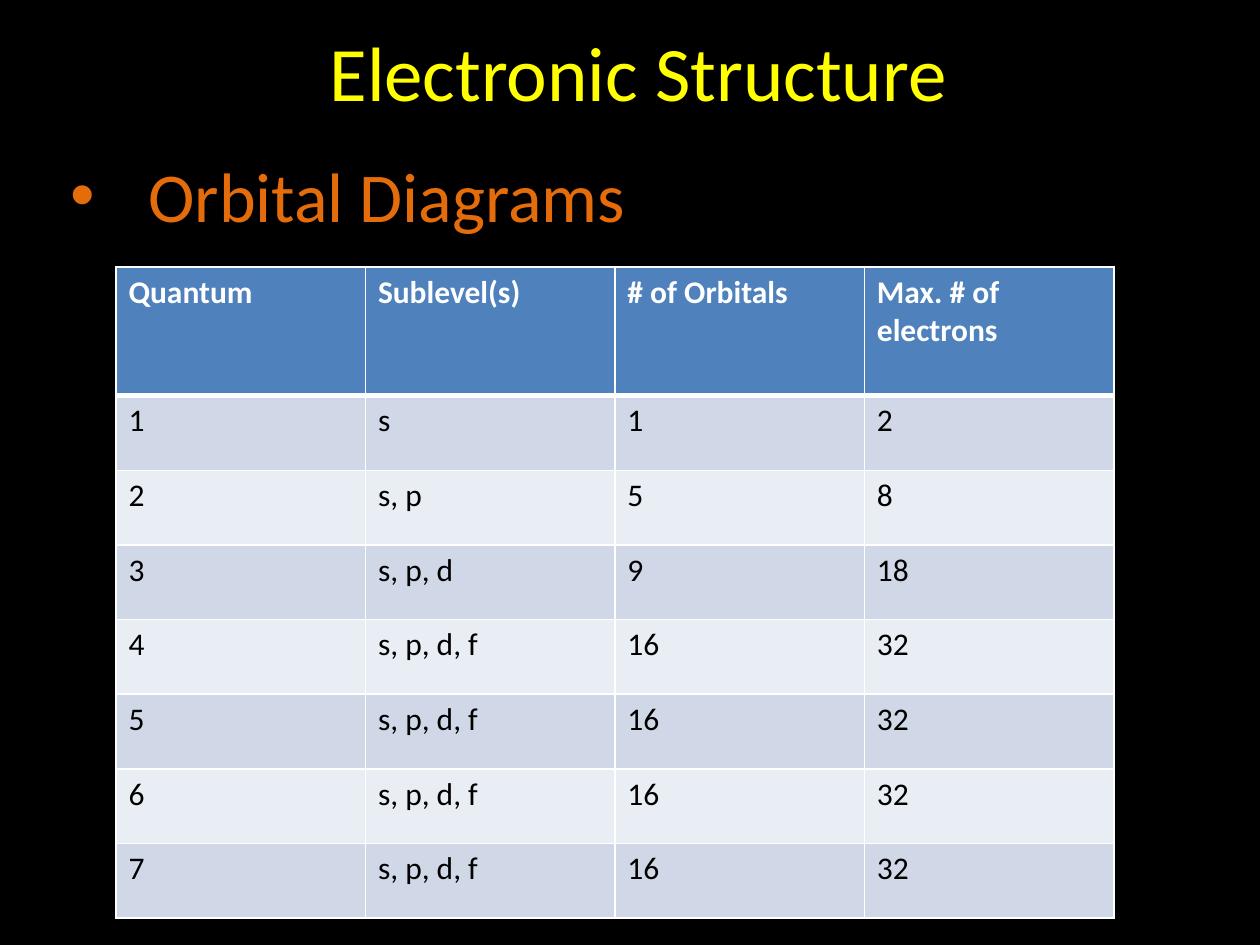
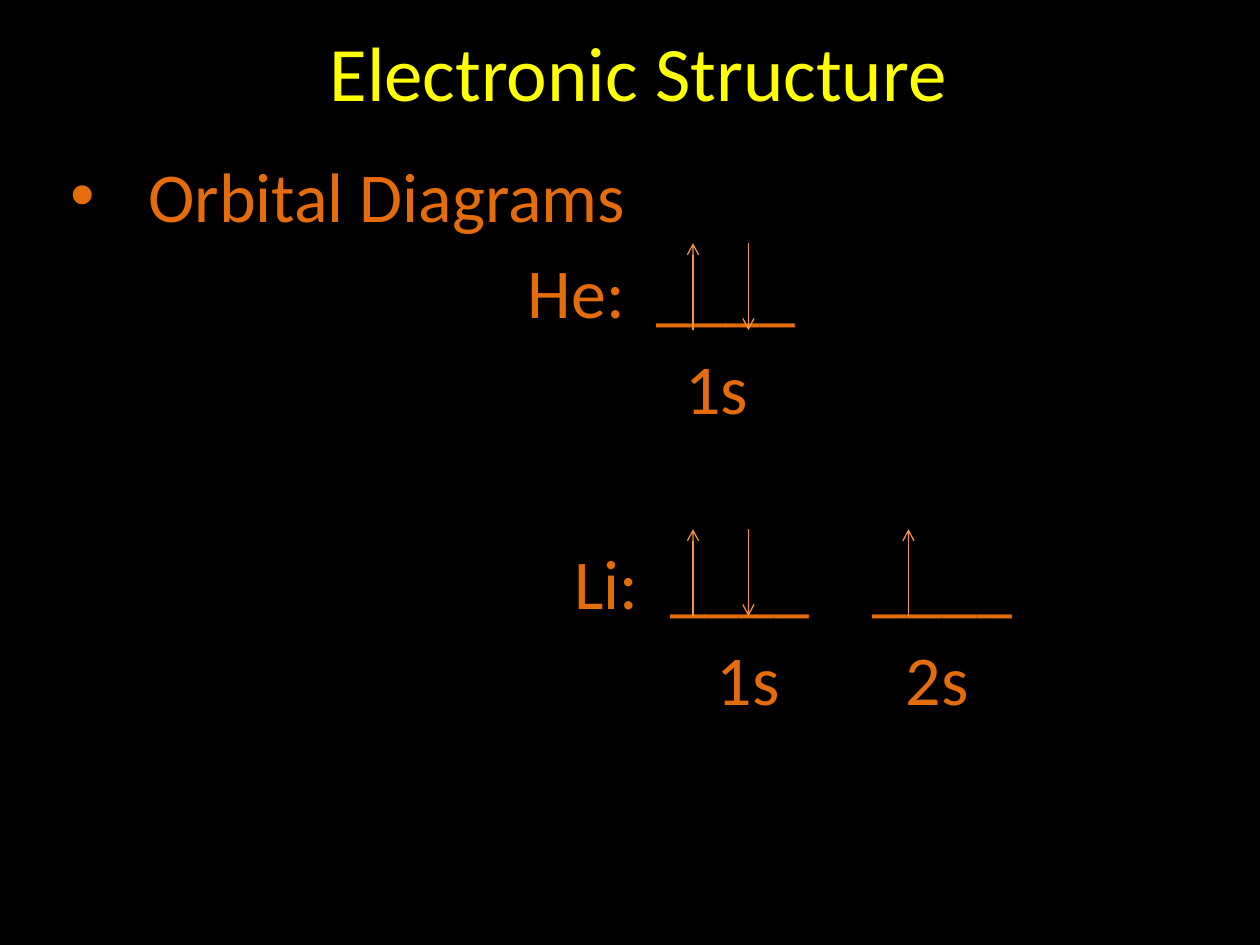
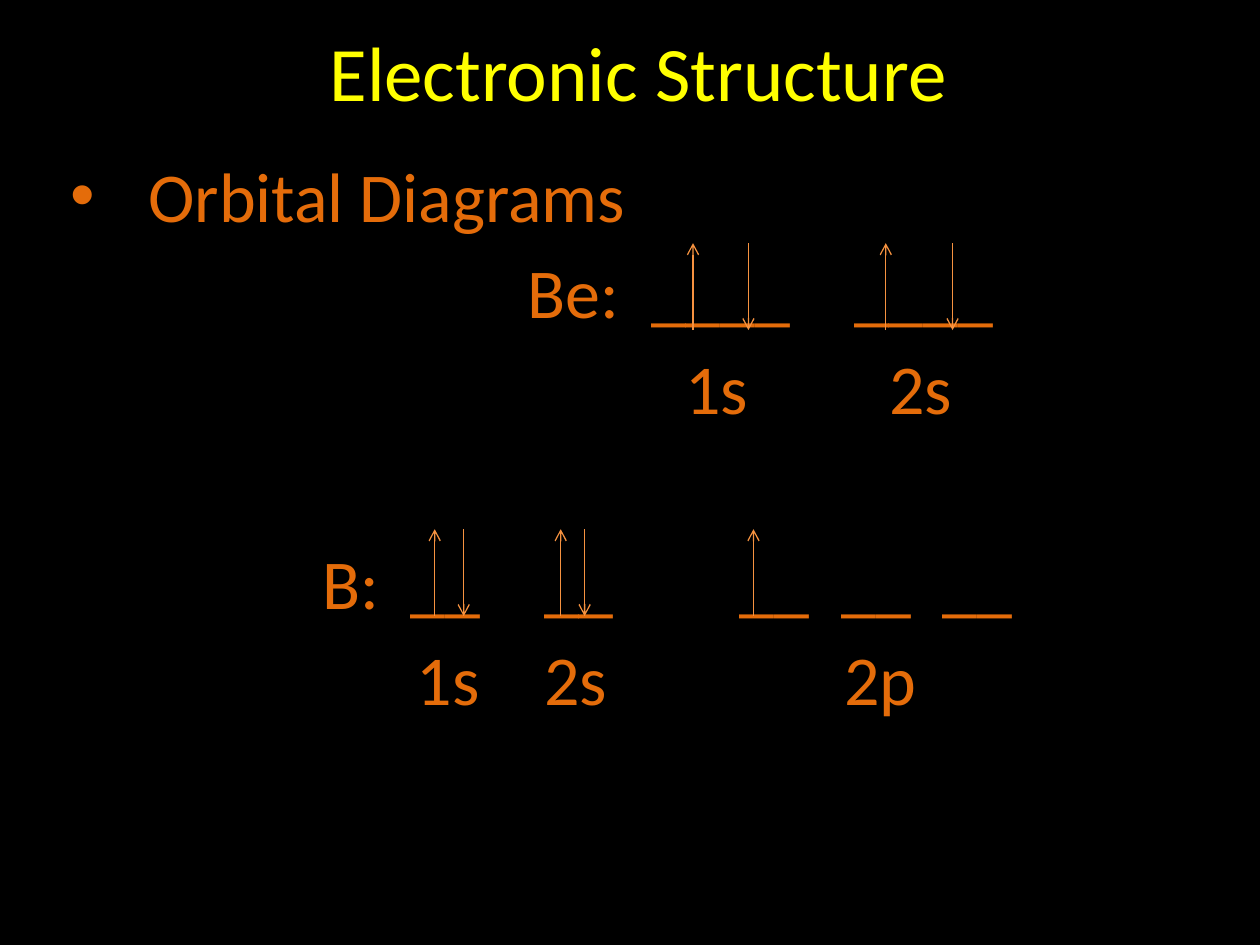
"""Build three slides on electronic structure and orbital diagrams."""
from lxml import etree
from pptx import Presentation
from pptx.dml.color import RGBColor
from pptx.enum.shapes import MSO_CONNECTOR
from pptx.enum.text import MSO_ANCHOR, PP_ALIGN
from pptx.oxml.ns import qn
from pptx.util import Inches, Pt

STRAIGHT = MSO_CONNECTOR.STRAIGHT
MIDDLE, TOP = MSO_ANCHOR.MIDDLE, MSO_ANCHOR.TOP
CENTER, LEFT = PP_ALIGN.CENTER, PP_ALIGN.LEFT

FONT = "Calibri"
BLACK, WHITE, YELLOW, ORANGE = "000000", "FFFFFF", "FFFF00", "E46C0A"
ARROW, HEADER, BAND_DARK, BAND_LIGHT = "F69240", "4F81BD", "D0D8E8", "E9EDF4"

TITLE = " Electronic Structure"
HEADING = "Orbital Diagrams"
ORBITAL_TABLE = [
    ("Quantum", "Sublevel(s)", "# of Orbitals", "Max. # of electrons"),
    ("1", "s", "1", "2"),
    ("2", "s, p", "5", "8"),
    ("3", "s, p, d", "9", "18"),
    ("4", "s, p, d, f", "16", "32"),
    ("5", "s, p, d, f", "16", "32"),
    ("6", "s, p, d, f", "16", "32"),
    ("7", "s, p, d, f", "16", "32"),
]

HELIUM = {
    "orbitals": [("He:", 3.63), ("____", 4.65)],
    "labels": [("1s", 4.88)],
    "electrons": [(5.5, "up"), (5.94, "down")],
}
LITHIUM = {
    "orbitals": [("Li:", 4), ("____", 4.76), ("____", 6.37)],
    "labels": [("1s", 5.13), ("2s", 6.63)],
    "electrons": [(5.5, "up"), (5.94, "down"), (7.21, "up")],
}
BERYLLIUM = {
    "orbitals": [("Be:", 3.63), ("____", 4.61), ("____", 6.22)],
    "labels": [("1s", 4.88), ("2s", 6.5)],
    "electrons": [(5.5, "up"), (5.94, "down"), (7.03, "up"), (7.56, "down")],
}
BORON = {
    "orbitals": [("B:", 2), ("__", 2.7), ("__", 3.76),
                 ("__", 5.31), ("__", 6.12), ("__", 6.92)],
    "labels": [("1s", 2.75), ("2s", 3.76), ("2p", 6.14)],
    "electrons": [(3.45, "up"), (3.68, "down"), (4.45, "up"),
                  (4.64, "down"), (5.98, "up")],
}
DIAGRAM_SLIDES = [(HELIUM, LITHIUM), (BERYLLIUM, BORON)]
ARROW_TOPS = (1.93, 4.2)
ARROW_LENGTH = 0.69
ATOM_GAPS = (7, 63)


def rgb(value):
    return RGBColor.from_string(value)


def write(paragraph, text, size=40, color=ORANGE, bold=False, align=LEFT, before=0):
    paragraph.alignment = align
    paragraph.space_before = Pt(before)
    run = paragraph.add_run()
    run.text = text
    run.font.name = FONT
    run.font.size = Pt(size)
    run.font.bold = bold
    run.font.color.rgb = rgb(color)


def add_text_frame(slide, left, top, width, height, anchor=TOP):
    box = slide.shapes.add_textbox(Inches(left), Inches(top), Inches(width), Inches(height))
    frame = box.text_frame
    frame.word_wrap = True
    frame.vertical_anchor = anchor
    return frame


def add_bullet(paragraph, indent):
    properties = paragraph._p.get_or_add_pPr()
    properties.set("marL", str(Inches(indent)))
    properties.set("indent", str(-Inches(indent)))
    etree.SubElement(properties, qn("a:buFont"), typeface="Arial")
    etree.SubElement(properties, qn("a:buChar"), char="•")


def add_tabbed_line(frame, entries, before):
    paragraph = frame.add_paragraph()
    write(paragraph, "".join("\t" + text for text, _ in entries), before=before)
    tabs = etree.SubElement(paragraph._p.get_or_add_pPr(), qn("a:tabLst"))
    for _, position in entries:
        etree.SubElement(tabs, qn("a:tab"), pos=str(Inches(position)), algn="l")


def add_base_slide(presentation, body_height):
    slide = presentation.slides.add_slide(presentation.slide_layouts[6])
    slide.background.fill.solid()
    slide.background.fill.fore_color.rgb = rgb(BLACK)
    title = add_text_frame(slide, 0.75, 0.14, 8.5, 0.84, anchor=MIDDLE)
    write(title.paragraphs[0], TITLE, size=44, color=YELLOW, align=CENTER)
    body = add_text_frame(slide, 0.46, 1.16, 9.32, body_height)
    write(body.paragraphs[0], HEADING, before=7)
    add_bullet(body.paragraphs[0], 0.62)
    return slide, body


def add_borders(cell, bottom_width):
    properties = cell._tc.get_or_add_tcPr()
    for side, width in (("L", 1), ("R", 1), ("T", 1), ("B", bottom_width)):
        line = etree.SubElement(properties, qn("a:ln" + side), w=str(Pt(width)))
        fill = etree.SubElement(line, qn("a:solidFill"))
        etree.SubElement(fill, qn("a:srgbClr"), val=WHITE)


def add_orbital_table(slide):
    header_height, total_height = 1.02, 5.17
    row_count, column_count = len(ORBITAL_TABLE), len(ORBITAL_TABLE[0])
    table = slide.shapes.add_table(row_count, column_count, Inches(0.92), Inches(2.12),
                                   Inches(7.92), Inches(total_height)).table
    row_height = (total_height - header_height) / (row_count - 1)
    for row, values in enumerate(ORBITAL_TABLE):
        is_header = row == 0
        table.rows[row].height = Inches(header_height if is_header else row_height)
        band = HEADER if is_header else BAND_DARK if row % 2 else BAND_LIGHT
        for column, text in enumerate(values):
            cell = table.cell(row, column)
            add_borders(cell, 3 if is_header else 1)
            cell.fill.solid()
            cell.fill.fore_color.rgb = rgb(band)
            write(cell.text_frame.paragraphs[0], text, size=18,
                  color=WHITE if is_header else BLACK, bold=is_header)


def add_electron(slide, x, top, spin):
    start, end = top, top + ARROW_LENGTH
    if spin == "up":
        start, end = end, start
    arrow = slide.shapes.add_connector(STRAIGHT, Inches(x), Inches(start), Inches(x), Inches(end))
    arrow.line.color.rgb = rgb(ARROW)
    arrow.line.width = Pt(0.75)
    etree.SubElement(arrow.line._get_or_add_ln(), qn("a:tailEnd"), type="arrow")
    etree.SubElement(arrow._element.spPr, qn("a:effectLst"))


def main():
    presentation = Presentation()
    presentation.slide_width, presentation.slide_height = Inches(10), Inches(7.5)
    slide, _ = add_base_slide(presentation, 5.7)
    add_orbital_table(slide)
    for atoms in DIAGRAM_SLIDES:
        slide, body = add_base_slide(presentation, 6.34)
        for atom, top, gap in zip(atoms, ARROW_TOPS, ATOM_GAPS):
            add_tabbed_line(body, atom["orbitals"], gap)
            add_tabbed_line(body, atom["labels"], 7)
            for x, spin in atom["electrons"]:
                add_electron(slide, x, top, spin)
    presentation.save("out.pptx")


if __name__ == "__main__":
    main()
